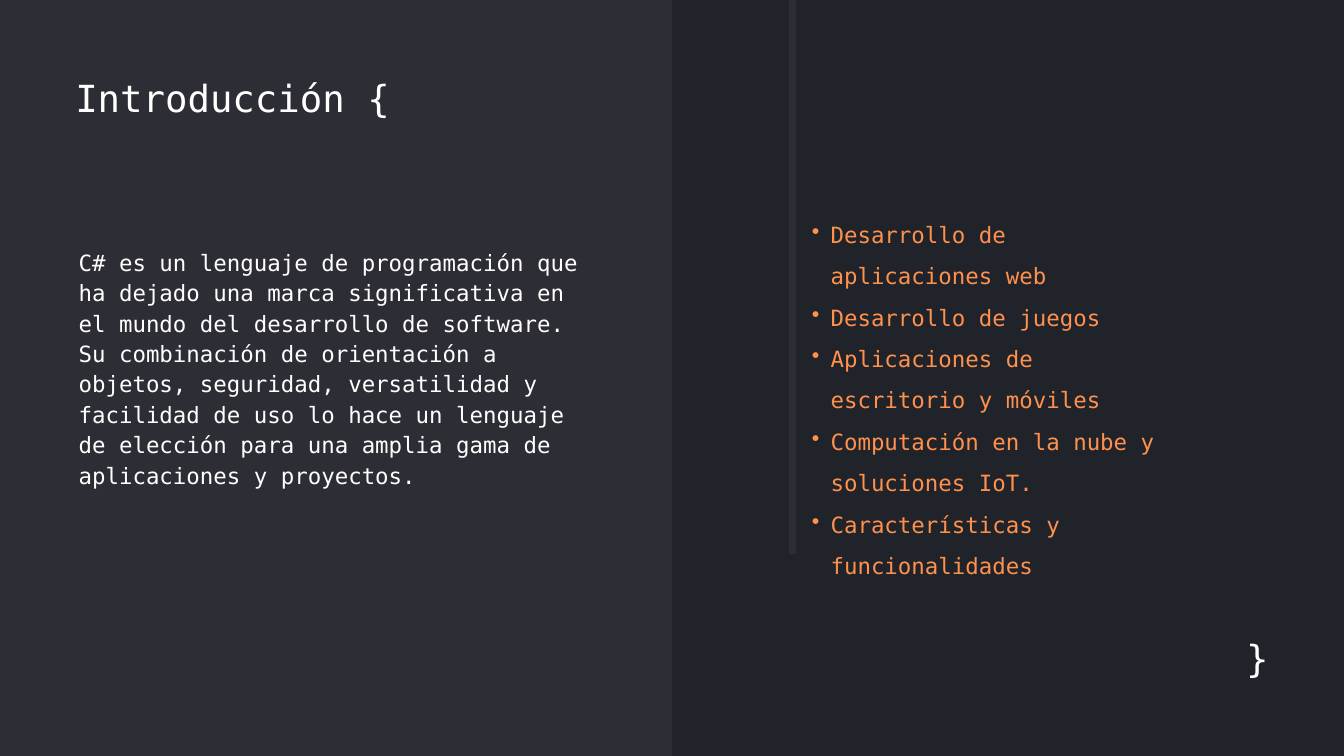
from lxml import etree
from pptx import Presentation
from pptx.dml.color import RGBColor
from pptx.enum.shapes import MSO_CONNECTOR, MSO_SHAPE
from pptx.enum.text import MSO_ANCHOR, MSO_AUTO_SIZE, PP_ALIGN
from pptx.oxml.ns import qn
from pptx.util import Inches, Pt

STRAIGHT = MSO_CONNECTOR.STRAIGHT
RECTANGLE = MSO_SHAPE.RECTANGLE
TOP = MSO_ANCHOR.TOP
NO_AUTOFIT = MSO_AUTO_SIZE.NONE
LEFT = PP_ALIGN.LEFT
RIGHT = PP_ALIGN.RIGHT

BACKGROUND = RGBColor(0x20, 0x23, 0x2A)
PANEL = RGBColor(0x2D, 0x2D, 0x35)
WHITE = RGBColor(0xFF, 0xFF, 0xFF)
ORANGE = RGBColor(0xFF, 0x91, 0x4D)
FONT = "DejaVu Sans Mono"
TITLE_ONLY = 5

INTRODUCTION = (
    "C# es un lenguaje de programación que ha dejado una marca significativa "
    "en el mundo del desarrollo de software. Su combinación de orientación a "
    "objetos, seguridad, versatilidad y facilidad de uso lo hace un lenguaje "
    "de elección para una amplia gama de aplicaciones y proyectos."
)
TOPICS = [
    "Desarrollo de aplicaciones web",
    "Desarrollo de juegos",
    "Aplicaciones de escritorio y móviles",
    "Computación en la nube y soluciones IoT.",
    "Características y funcionalidades",
]


def add_panel(slide, left, top, width, height):
    panel = slide.shapes.add_shape(
        RECTANGLE, Inches(left), Inches(top), Inches(width), Inches(height))
    panel.shadow.inherit = False
    panel.fill.solid()
    panel.fill.fore_color.rgb = PANEL
    panel.line.fill.background()


def add_rule(slide, x, top, bottom, width):
    rule = slide.shapes.add_connector(
        STRAIGHT, Inches(x), Inches(top), Inches(x), Inches(bottom))
    rule.line.color.rgb = PANEL
    rule.line.width = Pt(width)
    etree.SubElement(rule._element.spPr, qn("a:effectLst"))


def add_bullet(paragraph):
    paragraph.level = 1
    properties = paragraph._p.get_or_add_pPr()
    properties.set("marL", str(Inches(0.57)))
    properties.set("indent", str(Inches(-0.28)))
    etree.SubElement(properties, qn("a:buChar"), char="•")


def write_text(shape, texts, size, color, line_spacing, alignment=LEFT, bullets=False):
    """Fill a text shape without margins, one paragraph for each text."""
    frame = shape.text_frame
    frame.word_wrap = True
    frame.auto_size = NO_AUTOFIT
    frame.vertical_anchor = TOP
    frame.margin_left = frame.margin_right = 0
    frame.margin_top = frame.margin_bottom = 0
    for index, text in enumerate(texts):
        paragraph = frame.add_paragraph() if index else frame.paragraphs[0]
        paragraph.alignment = alignment
        paragraph.line_spacing = Pt(line_spacing)
        if bullets:
            add_bullet(paragraph)
        run = paragraph.add_run()
        run.text = text
        run.font.name = FONT
        run.font.size = Pt(size)
        run.font.color.rgb = color


def place_title(slide, text, left, top, width, height):
    title = slide.shapes.title
    title.left, title.top = Inches(left), Inches(top)
    title.width, title.height = Inches(width), Inches(height)
    write_text(title, [text], 40, WHITE, 45.6)


def add_text(slide, left, top, width, height, texts, *style, **options):
    box = slide.shapes.add_textbox(
        Inches(left), Inches(top), Inches(width), Inches(height))
    write_text(box, texts, *style, **options)


def main():
    presentation = Presentation()
    presentation.slide_width = Inches(20)
    presentation.slide_height = Inches(11.25)
    slide = presentation.slides.add_slide(presentation.slide_layouts[TITLE_ONLY])
    slide.background.fill.solid()
    slide.background.fill.fore_color.rgb = BACKGROUND

    add_panel(slide, -0.19, -0.11, 10.19, 11.36)
    # The title placeholder comes first, so it is moved in front of the panel.
    slide.shapes._spTree.append(slide.shapes.title._element)
    place_title(slide, "Introducción {", 1.12, 1.15, 7.69, 0.64)
    add_text(slide, 18.11, 9.49, 0.77, 0.64, ["}"], 40, WHITE, 45.6, alignment=RIGHT)
    add_text(slide, 1.17, 3.65, 7.64, 3.58, [INTRODUCTION], 24, WHITE, 32.6)
    add_text(slide, 11.79, 3.07, 5.73, 5.49, TOPICS, 24, ORANGE, 44.4, bullets=True)
    add_rule(slide, 11.79, -0.48, 8.25, 7.5)

    presentation.save("out.pptx")


if __name__ == "__main__":
    main()
